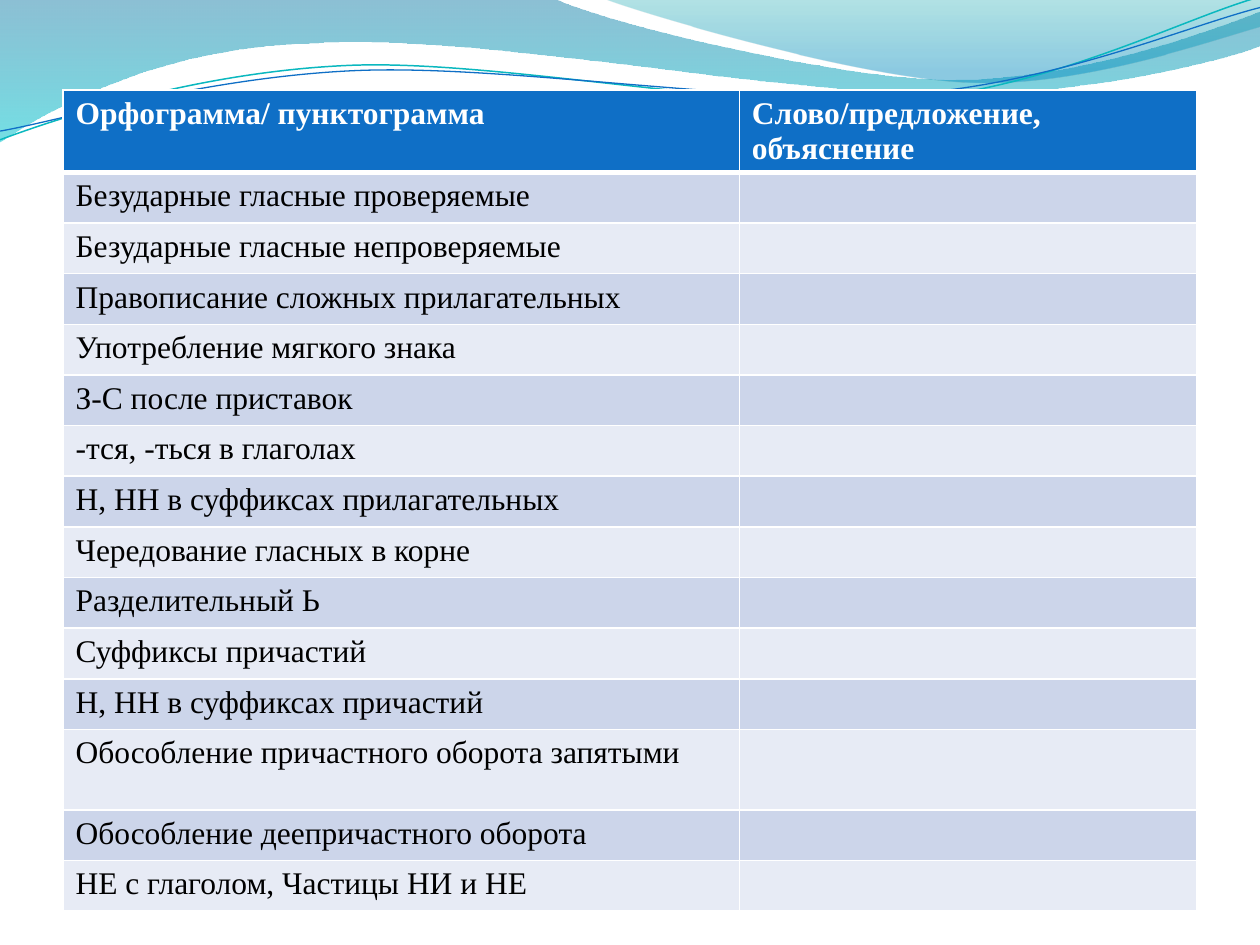
from lxml.etree import SubElement
from pptx import Presentation
from pptx.dml.color import RGBColor
from pptx.oxml.ns import qn
from pptx.util import Pt

WHITE = RGBColor(0xFF, 0xFF, 0xFF)
BLACK = RGBColor(0x00, 0x00, 0x00)
BLUE = RGBColor(0x0F, 0x6F, 0xC6)
TURQUOISE = RGBColor(0x0A, 0xB8, 0xBF)
BANDS = (RGBColor(0xCC, 0xD5, 0xEA), RGBColor(0xE7, 0xEB, 0xF5))
FONT = "Times New Roman"

HEADER = ("Орфограмма/ пунктограмма", "Слово/предложение, объяснение")
TOPICS = (
    "Безударные гласные проверяемые",
    "Безударные гласные непроверяемые",
    "Правописание сложных прилагательных",
    "Употребление мягкого знака",
    "З-С после приставок",
    "-тся, -ться в глаголах",
    "Н, НН в суффиксах прилагательных",
    "Чередование гласных в корне",
    "Разделительный Ь",
    "Суффиксы причастий",
    "Н, НН в суффиксах причастий",
    "Обособление причастного оборота запятыми",
    "Обособление деепричастного оборота",
    "НЕ с глаголом, Частицы НИ и НЕ",
)
TALL_ROWS = (0, 12)
TALL_HEIGHT, ROW_HEIGHT = 46, 28.95
COLUMN_WIDTHS = (386.5, 261.5)
TABLE_LEFT, TABLE_TOP = 36, 51.4
HEADER_BORDERS = {"a:lnL": 1, "a:lnR": 1, "a:lnT": 1, "a:lnB": 3}

# Each outline is a start point, then steps: one point for a line, three for a Bézier curve.
# Gradient stops are position, colour and opacity in percent.
WAVES = (
    {
        "outline": [
            (0, 0), [(316.8, -0.7)],
            [(342.7, 12.2), (478.1, 45.4), (545.8, 45.4)],
            [(614.2, 45.4), (689.8, 18.7), (720, 6.5)],
            [(720.7, 25.9)],
            [(707.8, 31.7), (626.4, 54.7), (537.1, 54)],
            [(447.8, 54), (275, 20.2), (185, 24.5)],
            [(92.9, 25.9), (33.1, 59.8), (-0.7, 81.4)],
            [(0, 0)],
        ],
        "stops": [(0, RGBColor(0x00, 0x74, 0xA1), 45), (1, RGBColor(0x00, 0xC6, 0xCF), 55)],
    },
    {
        "outline": [
            (344.9, -0.7),
            [(366.5, 7.9), (491, 44.6), (553.7, 46.8)],
            [(616.3, 49.7), (691.9, 23), (720, 15.1)],
            [(720, 0)],
            [(344.9, -0.7)],
        ],
        "stops": [(0, RGBColor(0x00, 0xA1, 0xA9), 30), (0.8, RGBColor(0x00, 0x8B, 0xBF), 45)],
    },
)
WAVE_LINES = (
    {
        "outline": [
            (0, 79.9),
            [(34.6, 67), (113.8, 41), (199.4, 37.4)],
            [(284.4, 33.8), (427, 64.1), (513.4, 57.6)],
            [(599.8, 51.1), (675.4, 10.8), (718.6, -1.4)],
        ],
        "color": TURQUOISE, "width": 0.85,
    },
    {
        "outline": [
            (0, 74.9),
            [(33.8, 69.1), (118.1, 43.9), (203.8, 40.3)],
            [(290.2, 36.7), (429.8, 60.5), (516.2, 54)],
            [(601.9, 48.2), (677.5, 15.1), (720, 4.3)],
        ],
        "color": BLUE, "width": 0.75,
    },
)


def add_outline(slide, outline, close):
    """Build the freeform from straight segments, then join each step of three into a curve."""
    start, *steps = outline
    builder = slide.shapes.build_freeform(Pt(start[0]), Pt(start[1]))
    builder.add_line_segments([(Pt(x), Pt(y)) for step in steps for x, y in step], close=close)
    shape = builder.convert_to_shape()
    shape.shadow.inherit = False
    segments = iter(list(shape.element.spPr.iter(qn("a:lnTo"))))
    for step in steps:
        first, *others = [next(segments) for _ in step]
        if others:
            curve = first.makeelement(qn("a:cubicBezTo"))
            first.addprevious(curve)
            for segment in (first, *others):
                curve.append(segment[0])
                segment.getparent().remove(segment)
    return shape


def add_wave(slide, outline, stops):
    shape = add_outline(slide, outline, close=True)
    shape.line.fill.background()
    shape.fill.gradient()
    shape.fill.gradient_angle = 270
    for stop, (position, color, _) in zip(shape.fill.gradient_stops, stops):
        stop.position = position
        stop.color.rgb = color
    colors = list(shape.element.spPr.iter(qn("a:srgbClr")))
    for color, (_, _, opacity) in zip(colors, stops):
        SubElement(color, qn("a:alpha"), val=str(opacity * 1000))


def add_wave_line(slide, outline, color, width):
    shape = add_outline(slide, outline, close=False)
    shape.fill.background()
    shape.line.color.rgb = color
    shape.line.width = Pt(width)


def add_header_borders(cell):
    properties = cell._tc.get_or_add_tcPr()
    for index, (tag, width) in enumerate(HEADER_BORDERS.items()):
        border = properties.makeelement(qn(tag), w=str(Pt(width)))
        fill = SubElement(border, qn("a:solidFill"))
        SubElement(fill, qn("a:srgbClr"), val=str(WHITE))
        properties.insert(index, border)


def add_topic_table(slide):
    rows = [HEADER] + [(topic, "") for topic in TOPICS]
    heights = [TALL_HEIGHT if i in TALL_ROWS else ROW_HEIGHT for i in range(len(rows))]
    table = slide.shapes.add_table(
        len(rows), len(HEADER), Pt(TABLE_LEFT), Pt(TABLE_TOP),
        Pt(sum(COLUMN_WIDTHS)), Pt(sum(heights)),
    ).table
    for column, width in zip(table.columns, COLUMN_WIDTHS):
        column.width = Pt(width)
    for index, (row, height, texts) in enumerate(zip(table.rows, heights, rows)):
        is_header = index == 0
        row.height = Pt(height)
        for cell, text in zip(row.cells, texts):
            cell.fill.solid()
            cell.fill.fore_color.rgb = BLUE if is_header else BANDS[(index - 1) % 2]
            if is_header:
                add_header_borders(cell)
            cell.text = text
            font = cell.text_frame.paragraphs[0].font
            font.name = FONT
            font.size = Pt(18)
            font.bold = is_header
            font.color.rgb = WHITE if is_header else BLACK


def main():
    presentation = Presentation()
    presentation.slide_width, presentation.slide_height = Pt(720), Pt(540)
    slide = presentation.slides.add_slide(presentation.slide_layouts[6])
    for wave in WAVES:
        add_wave(slide, **wave)
    for wave_line in WAVE_LINES:
        add_wave_line(slide, **wave_line)
    add_topic_table(slide)
    presentation.save("out.pptx")


if __name__ == "__main__":
    main()
